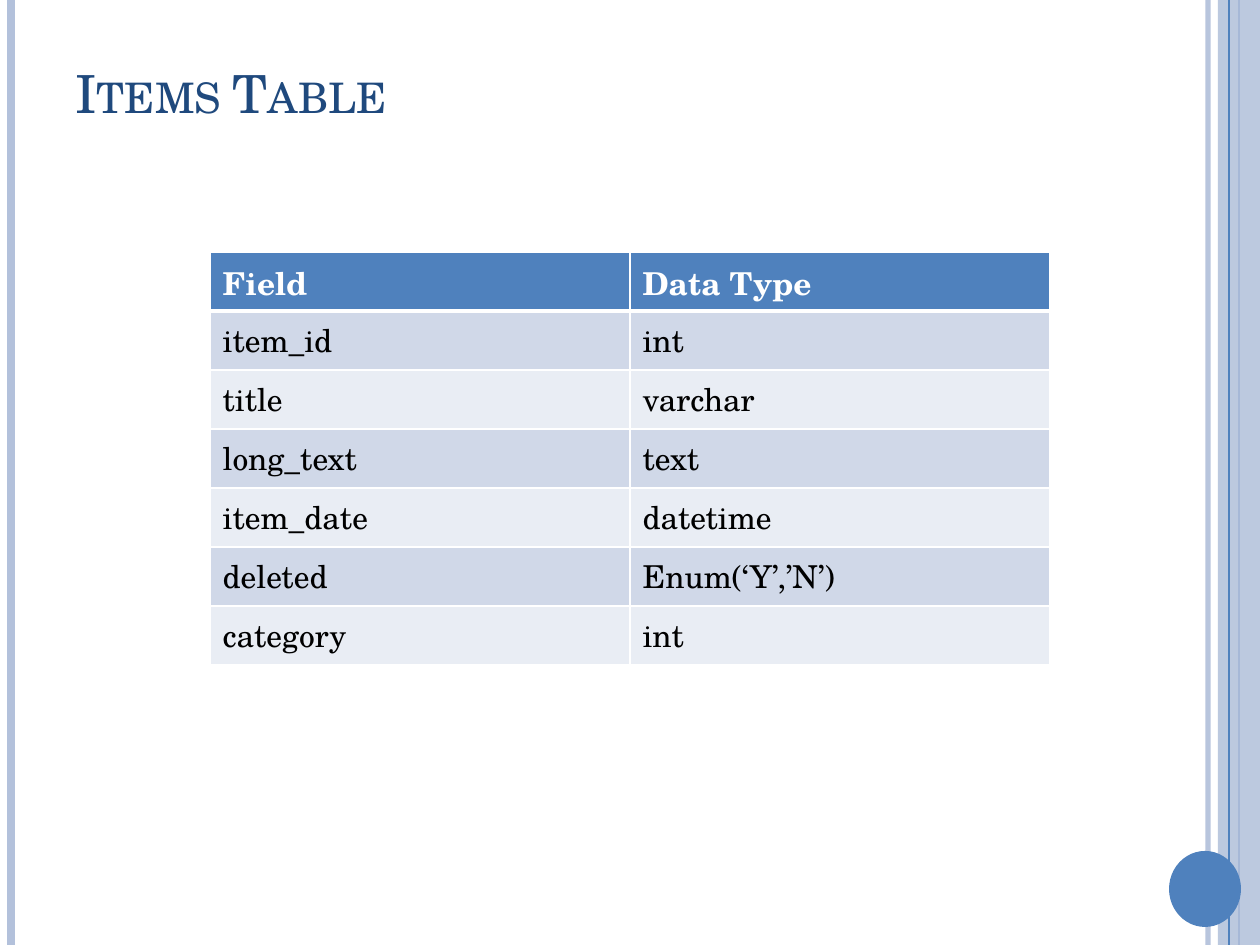
"""Build the Items Table slide with its side stripes and field listing."""
from lxml.etree import SubElement
from pptx import Presentation
from pptx.dml.color import RGBColor as RGB
from pptx.enum.shapes import MSO_CONNECTOR as CONN, MSO_SHAPE as SHAPE
from pptx.enum.text import MSO_ANCHOR as ANCHOR
from pptx.oxml.ns import qn
from pptx.util import Emu, Pt

SCALE = 914400 / 126
W, H = 1260, 945
FONT = "TeX Gyre Schola"
C = {"pale": "B3C1DB", "blue": "4F81BD", "navy": "1F497D", "white": "FFFFFF",
     "black": "000000", "band": "D0D8E8", "light": "E9EDF4"}


def px(*values):
    return [Emu(round(v * SCALE)) for v in values]


def paint(fill, color, alpha=100):
    fill.solid()
    fill.fore_color.rgb = RGB.from_string(C[color])
    if alpha < 100:
        clr = fill._xPr.find(".//" + qn("a:srgbClr"))
        SubElement(clr, qn("a:alpha"), val=str(alpha * 1000))


prs = Presentation()
prs.slide_width, prs.slide_height = px(W, H)
s = prs.slides.add_slide(prs.slide_layouts[6])

parts = [
    ("line", 1208, "pale", 3, 93),
    ("line", 11, "pale", 4.5, 100),
    ("line", 1239, "blue", 1.5, 100),
    (SHAPE.RECTANGLE, (1218, 0, 42, H), "pale", 0, 87),
    ("line", 1229, "blue", 0.75, 100),
    (SHAPE.OVAL, (1169, 851, 72, 76), "blue", 0, 100),
]
for kind, place, color, width, alpha in parts:
    if kind == "line":
        sp = s.shapes.add_connector(CONN.STRAIGHT, *px(place, 0, place, H))
        sp.line.width = Pt(width)
        paint(sp.line.fill, color, alpha)
        SubElement(sp._element.spPr, qn("a:effectLst"))
    else:
        sp = s.shapes.add_shape(kind, *px(*place))
        sp.shadow.inherit = False
        sp.line.fill.background()
        paint(sp.fill, color, alpha)

tf = s.shapes.add_textbox(*px(63, 38, 1092, 110)).text_frame
tf.word_wrap = True
tf.vertical_anchor = ANCHOR.MIDDLE
r = tf.paragraphs[0].add_run()
r.text = "Items Table"
for key, value in {"name": FONT, "size": Pt(30)}.items():
    setattr(r.font, key, value)
r.font.color.rgb = RGB.from_string(C["navy"])
r.font._element.set("cap", "small")

rows = [
    ("Field", "Data Type"),
    ("item_id", "int"),
    ("title", "varchar"),
    ("long_text", "text"),
    ("item_date", "datetime"),
    ("deleted", "Enum(‘Y’,’N’)"),
    ("category", "int"),
]
row_h = 59
table = s.shapes.add_table(len(rows), 2, *px(210, 252, 840, row_h * len(rows))).table
for i, row in enumerate(rows):
    head = i == 0
    fill = "blue" if head else "band" if i % 2 else "light"
    for j, text in enumerate(row):
        cell = table.cell(i, j)
        paint(cell.fill, fill)
        r = cell.text_frame.paragraphs[0].add_run()
        r.text = text
        for key, value in {"name": FONT, "size": Pt(18), "bold": head}.items():
            setattr(r.font, key, value)
        r.font.color.rgb = RGB.from_string(C["white" if head else "black"])
        tcPr = cell._tc.get_or_add_tcPr()
        for k, side in enumerate("LRTB"):
            thick = (head and side == "B") or (i == 1 and side == "T")
            ln = SubElement(tcPr, qn("a:ln" + side), w=str(Pt(3 if thick else 1)))
            SubElement(SubElement(ln, qn("a:solidFill")), qn("a:srgbClr"), val=C["white"])
            tcPr.insert(k, ln)

prs.save("out.pptx")
